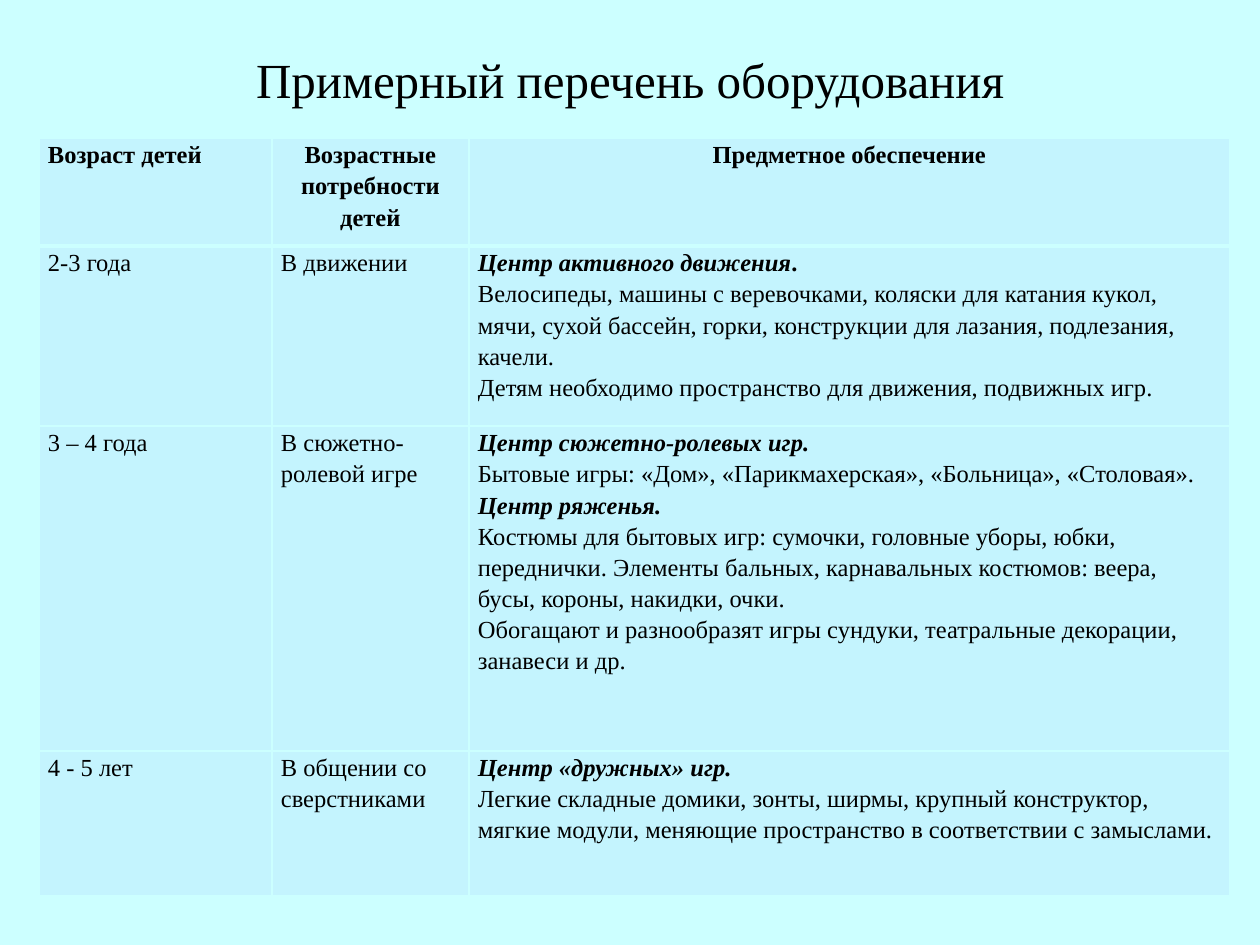
from lxml import etree
from pptx import Presentation
from pptx.dml.color import RGBColor
from pptx.enum.text import MSO_ANCHOR, PP_ALIGN
from pptx.oxml.ns import qn
from pptx.util import Pt

CENTER, LEFT = PP_ALIGN.CENTER, PP_ALIGN.LEFT
MIDDLE = MSO_ANCHOR.MIDDLE
PX = 914400 / 126
BACKGROUND = RGBColor(0xCC, 0xFF, 0xFF)
CELL_FILL = RGBColor(0xC4, 0xF4, 0xFE)
BLACK = RGBColor(0, 0, 0)
PLAIN = {"bold": False, "italic": False}
BOLD = {"bold": True, "italic": False}
CENTRE_NAME = {"bold": True, "italic": True}


def px(length):
    return round(length * PX)


def add_span(para, text, size, style):
    span = para.add_run()
    span.text = text
    span.font.color.rgb = BLACK
    for name, value in {"name": "Times New Roman", "size": Pt(size), **style}.items():
        setattr(span.font, name, value)


deck = Presentation()
deck.slide_width, deck.slide_height = px(1260), px(945)
page = deck.slides.add_slide(deck.slide_layouts[5])
page.background.fill.solid()
page.background.fill.fore_color.rgb = BACKGROUND

# Title
title = page.shapes.title
title_place = {"left": px(63), "top": px(38), "width": px(1134), "height": px(81)}
for name, value in title_place.items():
    setattr(title, name, value)
title.text_frame.vertical_anchor = MIDDLE
title_para = title.text_frame.paragraphs[0]
title_para.alignment = CENTER
add_span(title_para, "Примерный перечень оборудования", 28, PLAIN)

# Table content: a cell is a list of paragraphs, a paragraph a list of spans
ROWS = [
    [
        [[("Возраст детей", BOLD)]],
        [[("Возрастные потребности детей", BOLD)]],
        [[("Предметное обеспечение", BOLD)]],
    ],
    [
        [[("2-3 года", PLAIN)]],
        [[("В движении", PLAIN)]],
        [
            [("Центр активного движения", CENTRE_NAME), (".", BOLD)],
            [("Велосипеды, машины с веревочками, коляски для катания кукол, мячи, "
              "сухой бассейн, горки, конструкции для лазания, подлезания, качели.", PLAIN)],
            [("Детям необходимо пространство для движения, подвижных игр.", PLAIN)],
        ],
    ],
    [
        [[("3 – 4 года", PLAIN)]],
        [[("В сюжетно-ролевой игре", PLAIN)]],
        [
            [("Центр сюжетно-ролевых игр.", CENTRE_NAME)],
            [("Бытовые игры: «Дом», «Парикмахерская», «Больница», «Столовая».", PLAIN)],
            [("Центр ряженья.", CENTRE_NAME)],
            [("Костюмы для бытовых игр: сумочки, головные уборы, юбки, переднички. "
              "Элементы бальных, карнавальных костюмов: веера, бусы, короны, накидки, "
              "очки.", PLAIN)],
            [("Обогащают и разнообразят игры сундуки, театральные декорации, "
              "занавеси и др.", PLAIN)],
        ],
    ],
    [
        [[("4 - 5 лет", PLAIN)]],
        [[("В общении со сверстниками", PLAIN)]],
        [
            [("Центр «дружных» игр.", CENTRE_NAME)],
            [("Легкие складные домики, зонты, ширмы, крупный конструктор, мягкие модули, "
              "меняющие пространство в соответствии с замыслами.", PLAIN)],
        ],
    ],
]
COLUMN_WIDTHS = [233, 197, 761]
ROW_HEIGHTS = [108, 180, 325, 145]
MARGINS = {"margin_left": px(9), "margin_right": px(9), "margin_top": 0, "margin_bottom": 0}

# Table grid
table = page.shapes.add_table(
    len(ROWS), len(COLUMN_WIDTHS), px(39), px(138),
    px(sum(COLUMN_WIDTHS)), px(sum(ROW_HEIGHTS))).table
for column, width in zip(table.columns, COLUMN_WIDTHS):
    column.width = px(width)
for row, height in zip(table.rows, ROW_HEIGHTS):
    row.height = px(height)

# Cells
for row_index, row_content in enumerate(ROWS):
    for column_index, paragraphs in enumerate(row_content):
        cell = table.cell(row_index, column_index)
        for name, value in MARGINS.items():
            setattr(cell, name, value)

        # Borders, with a thicker line on both sides of the header's lower edge
        thick_side = {0: "lnB", 1: "lnT"}.get(row_index)
        properties = cell._tc.get_or_add_tcPr()
        for side in ("lnL", "lnR", "lnT", "lnB"):
            width = Pt(3 if side == thick_side else 1)
            line = etree.SubElement(properties, qn(f"a:{side}"), w=str(width))
            line_fill = etree.SubElement(line, qn("a:solidFill"))
            etree.SubElement(line_fill, qn("a:srgbClr"), val=str(BACKGROUND))
        cell.fill.solid()
        cell.fill.fore_color.rgb = CELL_FILL

        frame = cell.text_frame
        for number, spans in enumerate(paragraphs):
            para = frame.add_paragraph() if number else frame.paragraphs[0]
            para.line_spacing = 1.15
            para.alignment = CENTER if row_index == 0 and column_index else LEFT
            for text, style in spans:
                add_span(para, text, 14, style)

deck.save("out.pptx")
